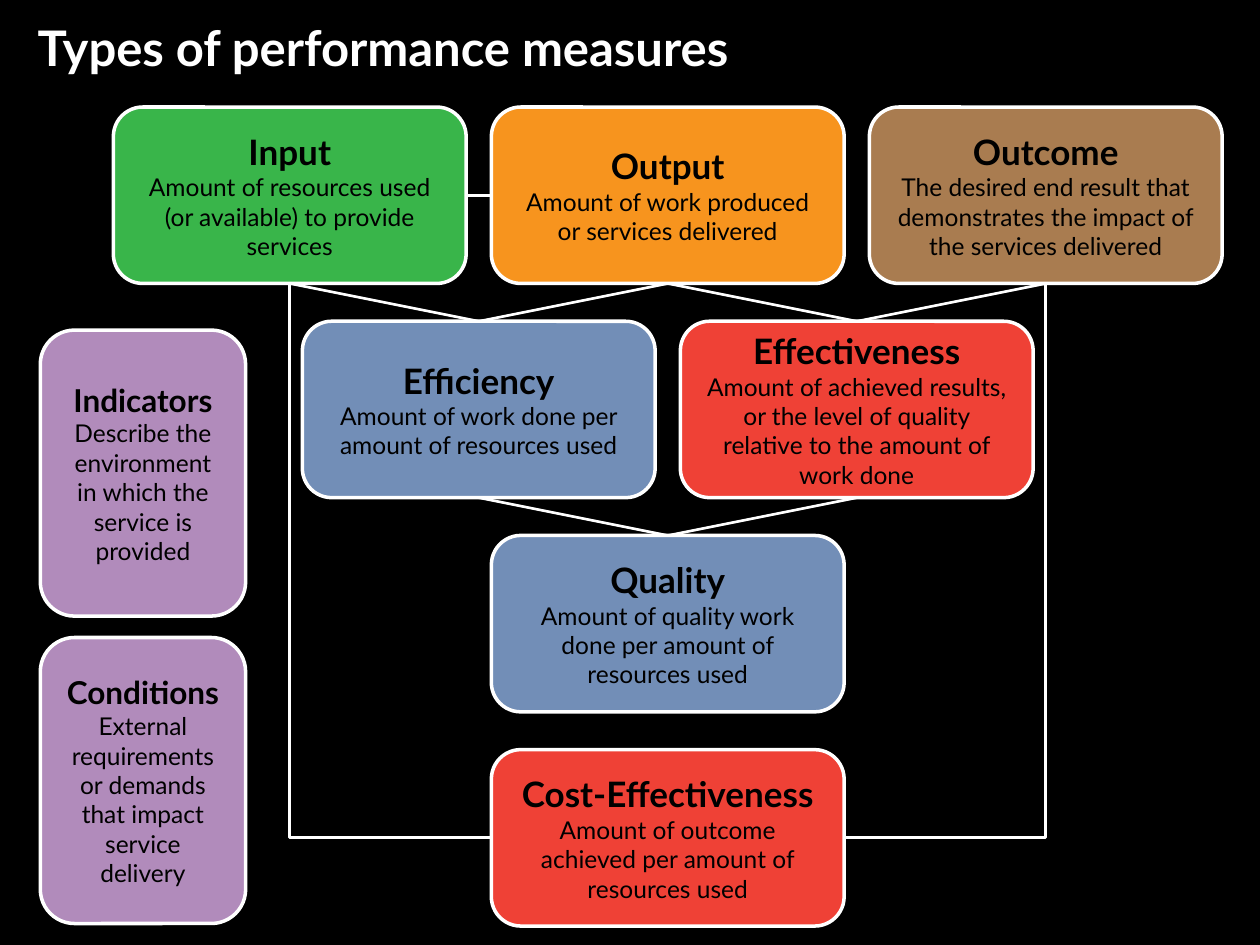
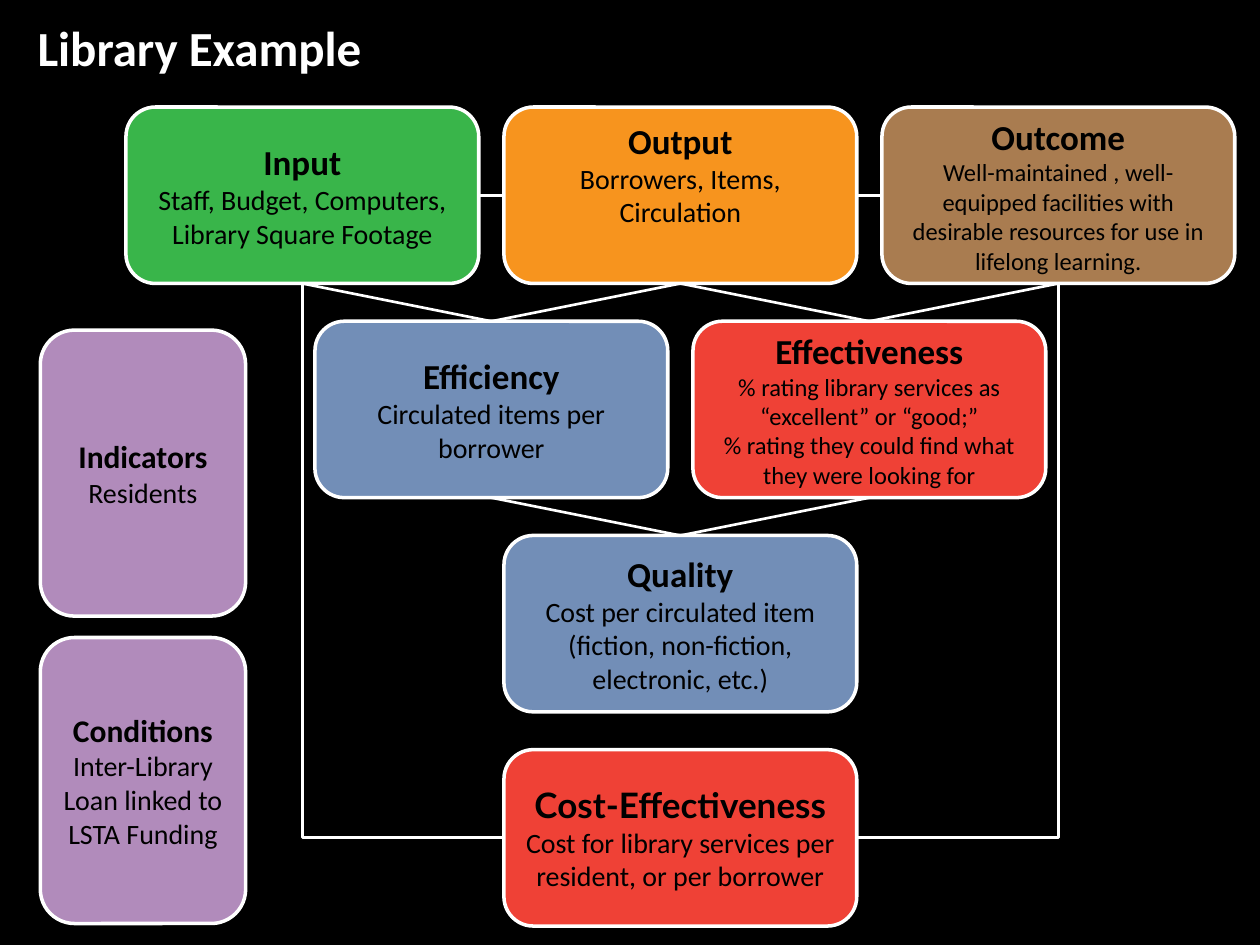
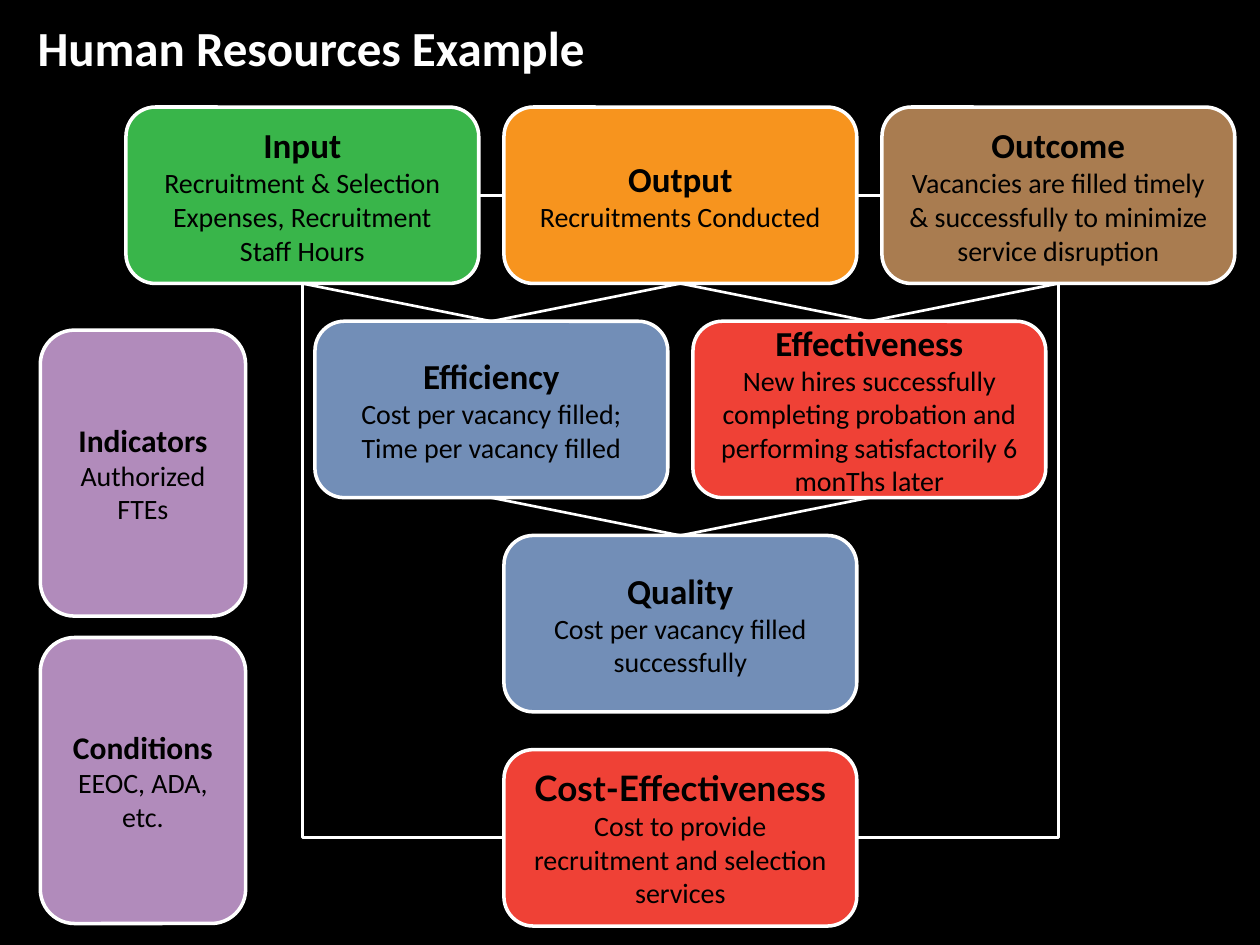
import dataclasses

import lxml.etree
import pptx
import pptx.dml.color
import pptx.enum.shapes
import pptx.enum.text
import pptx.oxml.ns
import pptx.util

BLACK, WHITE = "000000", "FFFFFF"
GREEN, ORANGE, BROWN = "39B54A", "F7941E", "A97C50"
BLUE, RED, PURPLE = "728EB7", "EF4136", "B18BBB"
TITLE_FONT = "Lato"
TOP, LEFT, BOTTOM, RIGHT = range(4)

MEASURES = {
    "Input": (0, 0, GREEN),
    "Output": (2, 0, ORANGE),
    "Outcome": (4, 0, BROWN),
    "Efficiency": (1, 1, BLUE),
    "Quality": (2, 2, BLUE),
    "Effectiveness": (3, 1, RED),
    "Cost-Effectiveness": (2, 3, RED),
}
CONTEXT = ("Indicators", "Conditions")
STRAIGHT_LINKS = [
    ("Input", BOTTOM, "Efficiency", TOP),
    ("Efficiency", TOP, "Output", BOTTOM),
    ("Output", BOTTOM, "Effectiveness", TOP),
    ("Effectiveness", TOP, "Outcome", BOTTOM),
    ("Efficiency", BOTTOM, "Quality", TOP),
    ("Quality", TOP, "Effectiveness", BOTTOM),
    ("Input", RIGHT, "Output", LEFT),
]
OUTCOME_LINK = ("Output", RIGHT, "Outcome", LEFT)
ELBOW_LINKS = [
    ("Cost-Effectiveness", RIGHT, "Outcome", BOTTOM),
    ("Cost-Effectiveness", LEFT, "Input", BOTTOM),
]


@dataclasses.dataclass
class Box:
    left: float
    top: float
    width: float
    height: float

    def inches(self):
        return [pptx.util.Inches(value) for value in dataclasses.astuple(self)]


@dataclasses.dataclass
class Diagram:
    title: str
    font: str
    size: int
    left: float
    texts: dict
    small: tuple = ()
    raised: tuple = ()
    outcome_linked: bool = True


DIAGRAMS = [
    Diagram("Types of performance measures", "Lato", 14, 0.9, {
        "Input": ["Amount of resources used (or available) to provide services"],
        "Output": ["Amount of work produced or services delivered"],
        "Outcome": ["The desired end result that demonstrates the impact of the services delivered"],
        "Efficiency": ["Amount of work done per amount of resources used"],
        "Quality": ["Amount of quality work done per amount of resources used"],
        "Effectiveness": ["Amount of achieved results, or the level of quality relative to the amount of work done"],
        "Cost-Effectiveness": ["Amount of outcome achieved per amount of resources used"],
        "Indicators": ["Describe the environment in which the service is provided"],
        "Conditions": ["External requirements or demands that impact service delivery"],
    }, outcome_linked=False),
    Diagram("Library Example", "Calibri", 16, 1, {
        "Input": ["Staff, Budget, Computers, Library Square Footage"],
        "Output": ["Borrowers, Items, Circulation"],
        "Outcome": ["Well-maintained , well-equipped facilities with desirable resources for use in lifelong learning."],
        "Efficiency": ["Circulated items per borrower"],
        "Quality": ["Cost per circulated item (fiction, non-fiction, electronic, etc.)"],
        "Effectiveness": ["% rating library services as “excellent” or “good;”",
                          "% rating they could find what they were looking for"],
        "Cost-Effectiveness": ["Cost for library services per resident, or per borrower"],
        "Indicators": ["Residents"],
        "Conditions": ["Inter-Library Loan linked to LSTA Funding"],
    }, small=("Outcome", "Effectiveness"), raised=("Output",)),
    Diagram("Human Resources Example", "Calibri", 16, 1, {
        "Input": ["Recruitment & Selection Expenses, Recruitment Staff Hours"],
        "Output": ["Recruitments Conducted"],
        "Outcome": ["Vacancies are filled timely & successfully to minimize service disruption"],
        "Efficiency": ["Cost per vacancy filled; Time per vacancy filled"],
        "Quality": ["Cost per vacancy filled successfully"],
        "Effectiveness": ["New hires successfully completing probation and performing satisfactorily 6 monThs later"],
        "Cost-Effectiveness": ["Cost to provide recruitment and selection services"],
        "Indicators": ["Authorized FTEs"],
        "Conditions": ["EEOC, ADA, etc."],
    }),
]


def color(value):
    return pptx.dml.color.RGBColor.from_string(value)


def write(paragraph, text, font, size, fill=BLACK, bold=False, align="CENTER"):
    paragraph.alignment = getattr(pptx.enum.text.PP_ALIGN, align)
    run = paragraph.add_run()
    run.text = text
    run.font.name = font
    run.font.size = pptx.util.Pt(size)
    run.font.bold = bold
    run.font.color.rgb = color(fill)


def prepare_frame(shape):
    frame = shape.text_frame
    frame.word_wrap = True
    frame.vertical_anchor = pptx.enum.text.MSO_ANCHOR.MIDDLE
    return frame


def add_title(slide, box, diagram):
    frame = prepare_frame(slide.shapes.add_textbox(*box.inches()))
    write(frame.paragraphs[0], diagram.title, diagram.font, 28, fill=WHITE, bold=True, align="LEFT")


def add_card(slide, box, name, fill, diagram, heading_size):
    card = slide.shapes.add_shape(pptx.enum.shapes.MSO_SHAPE.ROUNDED_RECTANGLE, *box.inches())
    card.shadow.inherit = False
    card.fill.solid()
    card.fill.fore_color.rgb = color(fill)
    card.line.color.rgb = color(WHITE)
    card.line.width = pptx.util.Pt(2)
    frame = prepare_frame(card)
    if name in diagram.raised:
        frame.margin_bottom = pptx.util.Inches(0.39)
    heading_font = TITLE_FONT if name == "Cost-Effectiveness" else diagram.font
    write(frame.paragraphs[0], name, heading_font, heading_size, bold=True)
    size = 14 if name in diagram.small else diagram.size
    for text in diagram.texts[name]:
        write(frame.add_paragraph(), text, diagram.font, size)
    return card


def add_link(slide, cards, link, elbow=False):
    start, start_side, end, end_side = link
    kinds = pptx.enum.shapes.MSO_CONNECTOR
    connector = slide.shapes.add_connector(kinds.ELBOW if elbow else kinds.STRAIGHT, 0, 0, 0, 0)
    connector.begin_connect(cards[start], start_side)
    connector.end_connect(cards[end], end_side)
    connector.line.color.rgb = color(WHITE)
    connector.line.width = pptx.util.Pt(1.5)
    properties = connector._element.spPr
    if elbow:
        properties.find(pptx.oxml.ns.qn("a:prstGeom")).set("prst", "bentConnector2")
    lxml.etree.SubElement(properties, pptx.oxml.ns.qn("a:effectLst"))


def add_measures(slide, box, diagram):
    column, row = box.width / 5.87, box.height / 3.82
    cards = {}
    for name, (across, down, fill) in MEASURES.items():
        cell = Box(box.left + across * 1.5, box.top + down * 1.7, 2.8, 1.4)
        cards[name] = add_card(slide, cell, name, fill, diagram, 20)
    for link in STRAIGHT_LINKS + [OUTCOME_LINK] * diagram.outcome_linked:
        add_link(slide, cards, link)
    for link in ELBOW_LINKS:
        add_link(slide, cards, link, elbow=True)


def add_context(slide, box, diagram):
    gap = 0.17
    height = (box.height - gap) / len(CONTEXT)
    for index, name in enumerate(CONTEXT):
        cell = Box(box.left, box.top + index * (height + gap), box.width, height)
        add_card(slide, cell, name, PURPLE, diagram, 18)


def add_diagram_slide(presentation, diagram):
    slide = presentation.slides.add_slide(presentation.slide_layouts[6])
    slide.background.fill.solid()
    slide.background.fill.fore_color.rgb = color(BLACK)
    add_measures(slide, Box(diagram.left, 0.85, 8.8, 6.5), diagram)
    add_title(slide, Box(0.2, 0, 9, 0.75), diagram)
    add_context(slide, Box(0.32, 2.62, 1.63, 4.71), diagram)


def main():
    presentation = pptx.Presentation()
    presentation.slide_width = pptx.util.Inches(10)
    presentation.slide_height = pptx.util.Inches(7.5)
    for diagram in DIAGRAMS:
        add_diagram_slide(presentation, diagram)
    presentation.save("out.pptx")


if __name__ == "__main__":
    main()
